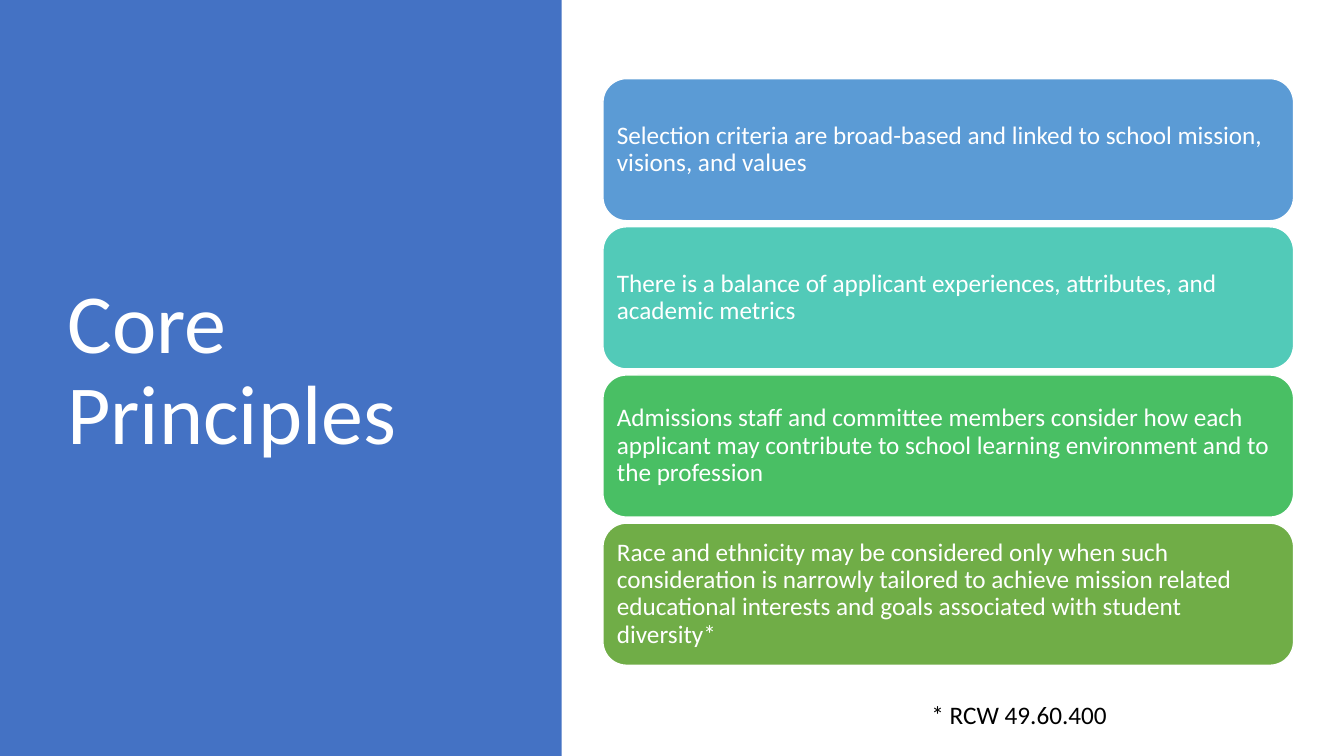
import pptx
import pptx.dml.color
import pptx.enum.shapes
import pptx.enum.text
import pptx.util

RGBColor = pptx.dml.color.RGBColor
WHITE = RGBColor(0xFF, 0xFF, 0xFF)
BLACK = RGBColor(0x00, 0x00, 0x00)
SIDEBAR_BLUE = RGBColor(0x44, 0x72, 0xC4)
LIGHT_BLUE = RGBColor(0x5B, 0x9B, 0xD5)
TEAL = RGBColor(0x52, 0xCA, 0xB8)
GREEN = RGBColor(0x49, 0xBF, 0x64)
OLIVE = RGBColor(0x70, 0xAD, 0x47)

PRINCIPLES = [
    ("Selection criteria are broad-based and linked to school mission, visions, and values",
     LIGHT_BLUE),
    ("There is a balance of applicant experiences, attributes, and academic metrics",
     TEAL),
    ("Admissions staff and committee members consider how each applicant may contribute "
     "to school learning environment and to the profession", GREEN),
    ("Race and ethnicity may be considered only when such consideration is "
     "narrowly tailored to achieve mission related educational interests and goals "
     "associated with student diversity*", OLIVE),
]
PANEL_TOP = 78
PANEL_PITCH = 147


def px(length):
    """Turn px, 100 to the inch, into EMU."""
    return pptx.util.Emu(length * 9144)


class SlideBuilder:
    font_name = "Calibri"

    def __init__(self, slide):
        self.slide = slide

    def set_text(self, shape, text, size, color, line_spacing=None):
        text_frame = shape.text_frame
        text_frame.word_wrap = True
        text_frame.text = text
        paragraph = text_frame.paragraphs[0]
        paragraph.alignment = pptx.enum.text.PP_ALIGN.LEFT
        if line_spacing:
            paragraph.line_spacing = line_spacing
        font = paragraph.runs[0].font
        font.name = self.font_name
        font.size = pptx.util.Pt(size)
        font.color.rgb = color

    def block(self, kind, left, top, width, height, fill):
        shape = self.slide.shapes.add_shape(
            kind, px(left), px(top), px(width), px(height))
        shape.shadow.inherit = False
        shape.fill.solid()
        shape.fill.fore_color.rgb = fill
        shape.line.fill.background()
        return shape

    def sidebar(self, left, top, width, height, fill):
        self.block(pptx.enum.shapes.MSO_SHAPE.RECTANGLE, left, top, width, height, fill)

    def panel(self, text, left, top, width, height, fill):
        shape = self.block(pptx.enum.shapes.MSO_SHAPE.ROUNDED_RECTANGLE,
                           left, top, width, height, fill)
        shape.line.color.rgb = WHITE
        shape.line.width = pptx.util.Pt(1)
        text_frame = shape.text_frame
        text_frame.vertical_anchor = pptx.enum.text.MSO_ANCHOR.MIDDLE
        text_frame.margin_left = text_frame.margin_right = px(7)
        text_frame.margin_top = text_frame.margin_bottom = px(7)
        self.set_text(shape, text, 18, WHITE, line_spacing=0.9)

    def text_box(self, text, left, top, width, height, size, color,
                 anchor=pptx.enum.text.MSO_ANCHOR.TOP, line_spacing=None):
        shape = self.slide.shapes.add_textbox(px(left), px(top), px(width), px(height))
        shape.text_frame.vertical_anchor = anchor
        self.set_text(shape, text, size, color, line_spacing)


def main():
    presentation = pptx.Presentation()
    presentation.slide_width = px(1333)
    presentation.slide_height = px(750)
    builder = SlideBuilder(presentation.slides.add_slide(presentation.slide_layouts[6]))

    builder.sidebar(0, 0, 557, 750, SIDEBAR_BLUE)
    builder.text_box("Core Principles", 57, 68, 416, 602, 60, WHITE,
                     anchor=pptx.enum.text.MSO_ANCHOR.MIDDLE, line_spacing=0.9)
    for index, (text, fill) in enumerate(PRINCIPLES):
        builder.panel(text, 598, PANEL_TOP + index * PANEL_PITCH, 685, 141, fill)
    builder.text_box("* RCW 49.60.400", 914, 689, 219, 40, 18, BLACK)

    presentation.save("out.pptx")


if __name__ == "__main__":
    main()
